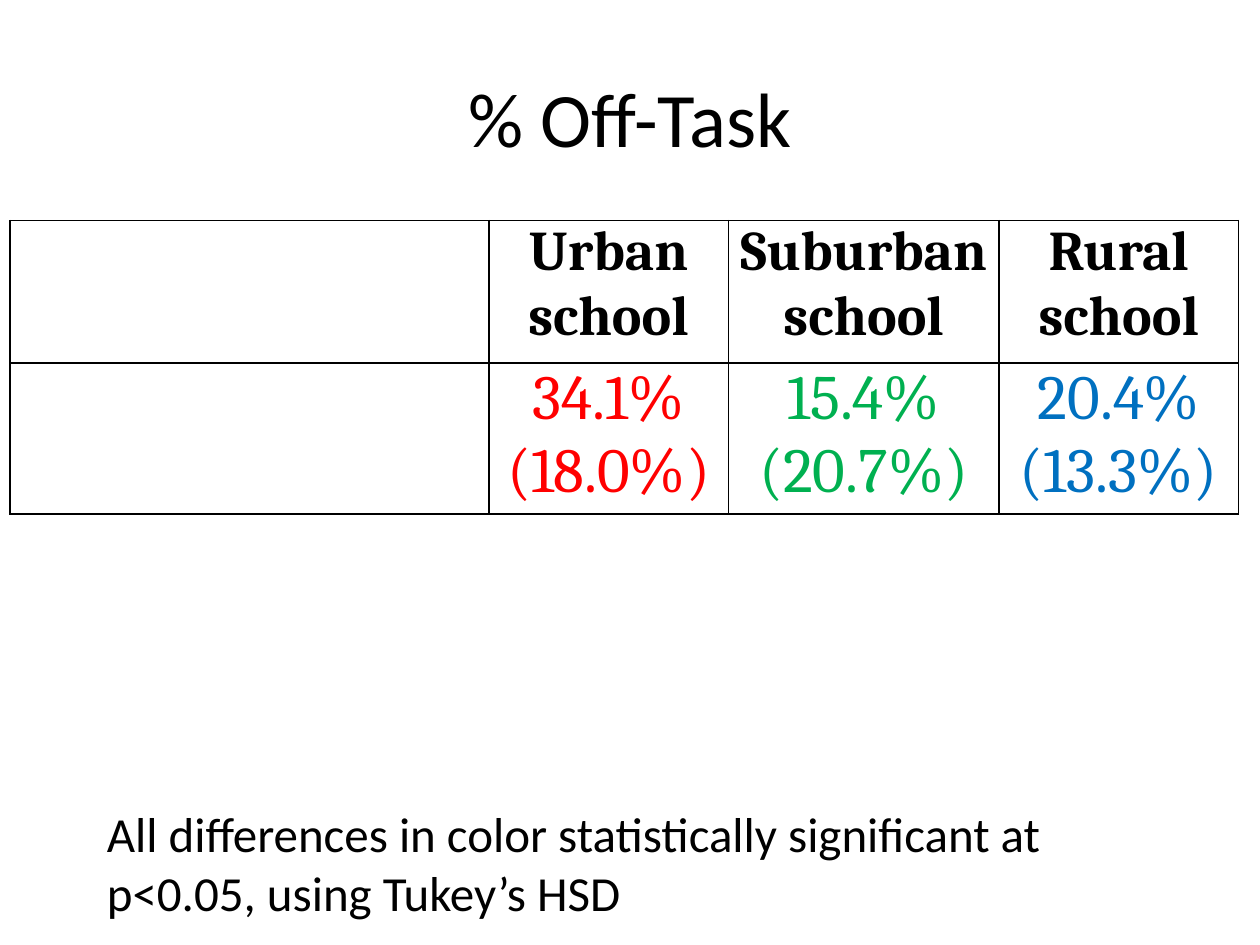
from dataclasses import dataclass

from lxml import etree
from pptx import Presentation
from pptx.dml.color import RGBColor
from pptx.enum import text
from pptx.oxml import ns
from pptx.util import Inches, Pt


@dataclass(frozen=True)
class Theme:
    sans: str = "Calibri"
    serif: str = "Cambria"
    black: str = "000000"
    red: str = "FF0000"
    green: str = "00B050"
    blue: str = "0070C0"
    title_size: int = 44
    header_size: int = 32
    value_size: int = 36
    note_size: int = 28
    border_width: int = 1


THEME = Theme()
SCHOOLS = [
    ("Urban school", "34.1% (18.0%)", THEME.red),
    ("Suburban school", "15.4% (20.7%)", THEME.green),
    ("Rural school", "20.4% (13.3%)", THEME.blue),
]
COLUMN_WIDTHS = [3.8, 1.9, 2.15, 1.9]
ROW_HEIGHTS = [1.13, 1.01]


def write(frame, words, font_name, size, color=THEME.black, bold=False,
          align=text.PP_ALIGN.CENTER):
    para = frame.paragraphs[0]
    para.text = words
    para.alignment = align
    font = para.font
    font.name, font.size, font.bold = font_name, Pt(size), bold
    font.color.rgb = RGBColor.from_string(color)


def add_text_box(page, left, top, width, height):
    box = page.shapes.add_textbox(
        Inches(left), Inches(top), Inches(width), Inches(height))
    box.text_frame.word_wrap = True
    return box.text_frame


def add_title(page, words):
    frame = add_text_box(page, 0.5, 0.3, 9, 1.25)
    frame.vertical_anchor = text.MSO_ANCHOR.MIDDLE
    write(frame, words, THEME.sans, THEME.title_size)


def add_note(page, words):
    frame = add_text_box(page, 0.75, 6.33, 8.58, 1.04)
    frame.auto_size = text.MSO_AUTO_SIZE.SHAPE_TO_FIT_TEXT
    write(frame, words, THEME.sans, THEME.note_size,
          align=text.PP_ALIGN.LEFT)


def style_cell(cell):
    """Give a cell thin borders on all sides, narrow margins and no fill."""
    cell.margin_left = cell.margin_right = Inches(0.07)
    cell.margin_top = cell.margin_bottom = 0
    properties = cell._tc.get_or_add_tcPr()
    for side in ("lnL", "lnR", "lnT", "lnB"):
        line = etree.SubElement(properties, ns.qn(f"a:{side}"),
                                w=str(Pt(THEME.border_width)))
        fill = etree.SubElement(line, ns.qn("a:solidFill"))
        etree.SubElement(fill, ns.qn("a:srgbClr"), val=THEME.black)
    cell.fill.background()


def add_school_table(page):
    table = page.shapes.add_table(
        len(ROW_HEIGHTS), len(COLUMN_WIDTHS), Inches(0.08), Inches(1.75),
        Inches(sum(COLUMN_WIDTHS)), Inches(sum(ROW_HEIGHTS))).table
    table.first_row = table.horz_banding = False
    for column, width in zip(table.columns, COLUMN_WIDTHS):
        column.width = Inches(width)
    for row, height in zip(table.rows, ROW_HEIGHTS):
        row.height = Inches(height)
    for cell in table.iter_cells():
        style_cell(cell)
    for index, (school, value, color) in enumerate(SCHOOLS, start=1):
        write(table.cell(0, index).text_frame, school,
              THEME.serif, THEME.header_size, bold=True)
        write(table.cell(1, index).text_frame, value,
              THEME.serif, THEME.value_size, color)


def main():
    deck = Presentation()
    deck.slide_width, deck.slide_height = Inches(10), Inches(7.5)
    page = deck.slides.add_slide(deck.slide_layouts[6])
    add_title(page, "% Off-Task")
    add_school_table(page)
    add_note(page, "All differences in color statistically significant at "
                   "p<0.05, using Tukey’s HSD")
    deck.save("out.pptx")


if __name__ == "__main__":
    main()
